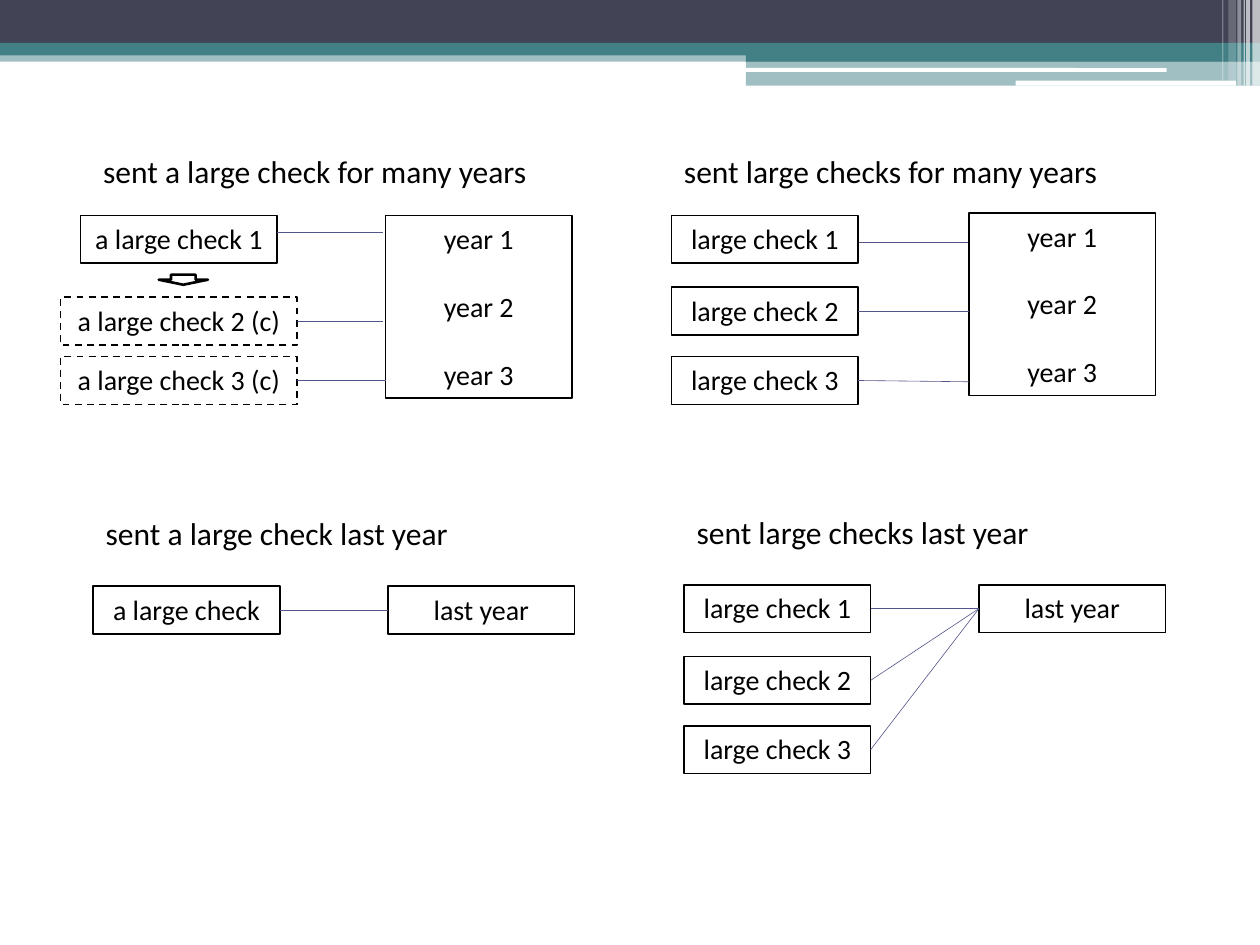
from lxml import etree
from pptx import Presentation
from pptx import util as u
from pptx.dml.color import RGBColor
from pptx.enum import dml, shapes, text
from pptx.oxml import ns

BLACK = RGBColor(0x00, 0x00, 0x00)
WHITE = RGBColor(0xFF, 0xFF, 0xFF)
NAVY = RGBColor(0x42, 0x44, 0x56)
TEAL = RGBColor(0x43, 0x80, 0x86)
VIOLET = RGBColor(0x53, 0x54, 0x8A)
RECT = shapes.MSO_SHAPE.RECTANGLE
ROUND = shapes.MSO_SHAPE.ROUNDED_RECTANGLE

BANDS = [
    (RECT, 0, 0.4, 10, 0.09, TEAL, 50),
    (RECT, 0, 0, 10, 0.34, NAVY, 100),
    (RECT, 0, 0.34, 10, 0.1, TEAL, 100),
    (RECT, 5.92, 0.39, 4.08, 0.1, TEAL, 100),
    (RECT, 5.92, 0.48, 4.08, 0.2, TEAL, 50),
    (ROUND, 5.91, 0.54, 3.35, 0.03, WHITE, 100),
    (ROUND, 8.06, 0.64, 1.75, 0.04, WHITE, 100),
]
STRIPES = [
    (9.94, 0.06, 0.68, 65), (9.89, 0.03, 0.68, 65), (9.87, 0.01, 0.68, 60),
    (9.82, 0.03, 0.68, 40), (9.75, 0.06, 0.64, 20), (9.7, 0.01, 0.64, 30),
]
HEADS = [
    ("sent a large check for many years", 0.72, 1.16),
    ("sent large checks for many years", 5.33, 1.16),
    ("sent a large check last year", 0.74, 4.03),
    ("sent large checks last year", 5.43, 4.02),
]
WIDE, HIGH = 1.48, 0.38
YEARS = ["year 1", "year 2", "year 3"]
CHECKS = ["large check 1", "large check 2", "large check 3"]
STEPS = [0, 0.57, 1.12]
BOXES = [
    (["a large check 1"], 0.64, 1.71, 1.56, HIGH, False),
    (["a large check 2 (c)"], 0.48, 2.36, 1.88, HIGH, True),
    (["a large check 3 (c)"], 0.48, 2.83, 1.88, HIGH, True),
    (YEARS, 3.06, 1.71, WIDE, 1.45, False),
    (YEARS, 7.69, 1.69, WIDE, 1.45, False),
    (["a large check"], 0.74, 4.65, WIDE, HIGH, False),
    (["last year"], 3.08, 4.65, WIDE, HIGH, False),
    (["last year"], 7.77, 4.64, WIDE, HIGH, False),
] + [
    ([name], left, top + step, WIDE, HIGH, False)
    for left, top in [(5.33, 1.71), (5.43, 4.64)]
    for name, step in zip(CHECKS, STEPS)
]
LINKS = [
    (2.2, 1.84, 3.04, 1.84), (2.36, 2.55, 3.04, 2.55), (2.36, 3.02, 3.06, 3.02),
    (6.82, 1.92, 7.68, 1.92), (6.82, 2.47, 7.69, 2.47), (6.82, 3.03, 7.69, 3.03),
    (2.22, 4.84, 3.08, 4.84),
] + [(6.91, 4.83 + step, 7.77, 4.83) for step in STEPS]

deck = Presentation()
deck.slide_width, deck.slide_height = u.Inches(10), u.Inches(7.5)
slide = deck.slides.add_slide(deck.slide_layouts[6])


def place(*nums):
    return [u.Inches(num) for num in nums]


def write(shape, lines, size=16, align=text.PP_ALIGN.CENTER, gap=19.5):
    frame = shape.text_frame
    frame.word_wrap = True
    frame.vertical_anchor = text.MSO_ANCHOR.TOP
    for i, line in enumerate(lines):
        para = frame.paragraphs[0] if i == 0 else frame.add_paragraph()
        para.alignment = align
        if i:
            para.space_before = u.Pt(gap)
        run = para.add_run()
        run.text = line
        run.font.size, run.font.name = u.Pt(size), "Calibri"
        run.font.color.rgb = BLACK


def band(kind, left, top, wide, high, color, alpha):
    shape = slide.shapes.add_shape(kind, *place(left, top, wide, high))
    shape.shadow.inherit = False
    shape.line.fill.background()
    shape.fill.solid()
    shape.fill.fore_color.rgb = color
    if alpha < 100:
        tint = shape.fill._xPr.find(".//" + ns.qn("a:srgbClr"))
        etree.SubElement(tint, ns.qn("a:alpha")).set("val", str(alpha * 1000))


def frame(kind, left, top, wide, high, weight=1, dash=False):
    shape = slide.shapes.add_shape(kind, *place(left, top, wide, high))
    shape.shadow.inherit = False
    shape.fill.background()
    shape.line.color.rgb, shape.line.width = BLACK, u.Pt(weight)
    if dash:
        shape.line.dash_style = dml.MSO_LINE.DASH
    return shape


def join(connect, site, x, y, boxes):
    for box in boxes:
        side = box.left + (box.width if site == 3 else 0)
        mid = box.top + box.height / 2
        if max(abs(side - u.Inches(x)), abs(mid - u.Inches(y))) < u.Inches(0.016):
            connect(box, site)


for item in BANDS:
    band(*item)
for left, wide, high, alpha in STRIPES:
    band(RECT, left, 0, wide, high, WHITE, alpha)

for head, left, top in HEADS:
    label = slide.shapes.add_textbox(*place(left, top, 3.91, 0.4))
    write(label, [head], size=18, align=text.PP_ALIGN.LEFT)

boxes = []
for lines, left, top, wide, high, dash in BOXES:
    box = frame(RECT, left, top, wide, high, dash=dash)
    write(box, lines)
    boxes.append(box)
frame(shapes.MSO_SHAPE.DOWN_ARROW, 1.26, 2.18, 0.39, 0.08, weight=1.5)

for x1, y1, x2, y2 in LINKS:
    link = slide.shapes.add_connector(
        shapes.MSO_CONNECTOR.STRAIGHT, *place(x1, y1, x2, y2))
    link.line.color.rgb, link.line.width = VIOLET, u.Pt(0.35)
    etree.SubElement(link._element.spPr, ns.qn("a:effectLst"))
    join(link.begin_connect, 3, x1, y1, boxes)
    join(link.end_connect, 1, x2, y2, boxes)

deck.save("out.pptx")
